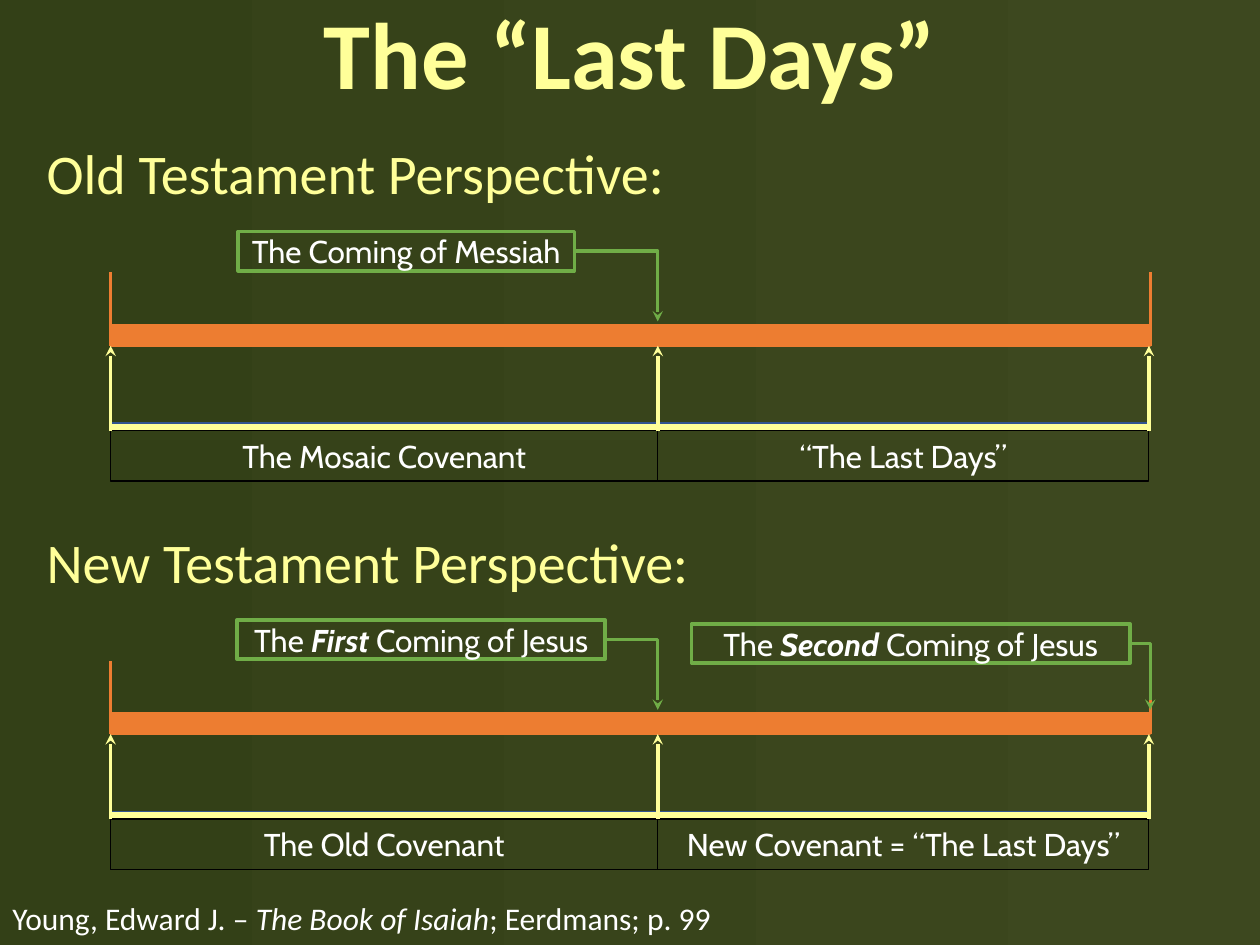
from lxml.etree import SubElement
from pptx import Presentation
from pptx.dml.color import RGBColor
from pptx.enum.shapes import MSO_CONNECTOR, MSO_SHAPE
from pptx.enum.text import MSO_ANCHOR, MSO_AUTO_SIZE, PP_ALIGN
from pptx.oxml.ns import qn
from pptx.util import Cm, Pt

ORANGE, GREEN, YELLOW = "ED7D31", "70AD47", "FFFF99"
WHITE, BLACK, BLUE = "FFFFFF", "000000", "325491"

# Horizontal positions of the timelines, in centimetres
START, MIDDLE, LABEL_END, END = 2.23, 13.26, 23.16, 23.19

# Vertical distances below the top of each heading, in centimetres
TICK_TOP, POINTER_TIP, BAR_TOP, BAR_BOTTOM = 2.82, 3.81, 3.88, 4.3
BRACE_TOP, LABEL_TOP = 5.86, 6.01

# Each callout: left, distance below heading, width, pointer x, runs
PERSPECTIVES = [
    (2.67, "Old Testament Perspective:", 13.11,
     ["The Mosaic Covenant", "“The Last Days”"],
     [(4.8, 2.0, 6.78, MIDDLE, [("The Coming of Messiah", "")])]),
    (10.5, "New Testament Perspective:", 13.59,
     ["The Old Covenant", "New Covenant = “The Last Days”"],
     [(4.78, 2.0, 7.42, MIDDLE,
       [("The ", ""), ("First", "bi"), (" Coming of Jesus", "")]),
      (13.94, 2.08, 8.84, END,
       [("The ", ""), ("Second", "bi"), (" Coming of Jesus", "")])]),
]


def color(hex_string):
    return RGBColor.from_string(hex_string)


def write(shape, runs, font_name, size, text_color, align=PP_ALIGN.LEFT):
    """Fill one paragraph with (text, style) runs; style holds b and/or i."""
    paragraph = shape.text_frame.paragraphs[0]
    paragraph.alignment = align
    for text, style in runs:
        run = paragraph.add_run()
        run.text = text
        run.font.name = font_name
        run.font.size = Pt(size)
        run.font.color.rgb = color(text_color)
        run.font.bold = "b" in style
        run.font.italic = "i" in style
    return paragraph


def add_text(slide, left, top, width, height, wrap=True):
    text_box = slide.shapes.add_textbox(Cm(left), Cm(top), Cm(width), Cm(height))
    text_box.text_frame.word_wrap = wrap
    return text_box


def add_box(slide, left, top, width, height, line, line_width, fill=None):
    box = slide.shapes.add_shape(
        MSO_SHAPE.RECTANGLE, Cm(left), Cm(top), Cm(width), Cm(height))
    box.shadow.inherit = False
    if fill:
        box.fill.solid()
        box.fill.fore_color.rgb = color(fill)
    else:
        box.fill.background()
    box.line.color.rgb = color(line)
    box.line.width = Pt(line_width)
    return box


def add_line(slide, x1, y1, x2, y2, line, arrow=False, kind=MSO_CONNECTOR.STRAIGHT):
    connector = slide.shapes.add_connector(kind, Cm(x1), Cm(y1), Cm(x2), Cm(y2))
    connector.line.color.rgb = color(line)
    connector.line.width = Pt(2)
    if arrow:
        SubElement(connector.line._get_or_add_ln(), qn("a:tailEnd"), type="stealth")
    SubElement(connector._element.spPr, qn("a:effectLst"))
    return connector


def add_callout(slide, left, top, width, tip_x, tip_y, runs):
    height = 0.79
    box = add_box(slide, left, top, width, height, GREEN, 2)
    box.text_frame.vertical_anchor = MSO_ANCHOR.MIDDLE
    write(box, runs, "Cabin", 18, WHITE, PP_ALIGN.CENTER)
    pointer = add_line(slide, left + width, top + height / 2, tip_x, tip_y,
                       GREEN, True, MSO_CONNECTOR.ELBOW)
    pointer.begin_connect(box, 3)
    # One bend: across, then down
    pointer._element.spPr.find(qn("a:prstGeom")).set("prst", "bentConnector2")


def add_period(slide, left, right, top, text):
    """Brace and label under one part of the timeline."""
    add_box(slide, left, top + BRACE_TOP, right - left, 0.15, BLUE, 1, YELLOW)
    label = add_box(slide, left, top + LABEL_TOP, right - left, 1.02, BLACK, 0.75)
    label.text_frame.vertical_anchor = MSO_ANCHOR.TOP
    label.text_frame.auto_size = MSO_AUTO_SIZE.SHAPE_TO_FIT_TEXT
    write(label, [(text, "")], "Cabin", 18, WHITE, PP_ALIGN.CENTER)


def add_perspective(slide, top, heading, heading_width, periods, callouts):
    # Timeline bar with a tick at both ends
    add_box(slide, START, top + BAR_TOP, END - START, BAR_BOTTOM - BAR_TOP,
            ORANGE, 1, ORANGE)
    for x in (START, END):
        add_line(slide, x, top + BAR_BOTTOM, x, top + TICK_TOP, ORANGE)

    # Periods and the arrows that mark their limits
    limits = (START, MIDDLE, LABEL_END)
    for left, right, text in zip(limits, limits[1:], periods):
        add_period(slide, left, right, top, text)
    for x in limits:
        add_line(slide, x, top + LABEL_TOP, x, top + BAR_BOTTOM, YELLOW, True)

    # Events above the bar
    for left, drop, width, tip_x, runs in callouts:
        add_callout(slide, left, top + drop, width, tip_x, top + POINTER_TIP, runs)

    heading_box = add_text(slide, 0.69, top, heading_width, 1.62, wrap=False)
    write(heading_box, [(heading, "")], "Calibri", 32, YELLOW)


def set_background(slide):
    fill = slide.background.fill
    fill.gradient()
    fill.gradient_angle = 180
    for stop, shade in zip(fill.gradient_stops, ("3D481F", "334017")):
        stop.color.rgb = color(shade)


def main():
    presentation = Presentation()
    presentation.slide_width, presentation.slide_height = Cm(25.4), Cm(19.05)
    slide = presentation.slides.add_slide(presentation.slide_layouts[6])
    set_background(slide)

    # Title
    title = add_text(slide, 0, 0, 25.4, 2.39)
    title.text_frame.vertical_anchor = MSO_ANCHOR.MIDDLE
    paragraph = write(title, [("The “Last Days”", "b")], "Calibri", 54, YELLOW,
                      PP_ALIGN.CENTER)
    paragraph.line_spacing = 0.9

    # Timelines
    for perspective in PERSPECTIVES:
        add_perspective(slide, *perspective)

    # Source
    source = add_text(slide, 0, 18, 25.4, 1.02)
    write(source, [("Young, Edward J. – ", ""), ("The Book of Isaiah", "i"),
                   ("; Eerdmans; p. 99", "")], "Calibri", 18, WHITE)

    presentation.save("out.pptx")


if __name__ == "__main__":
    main()
